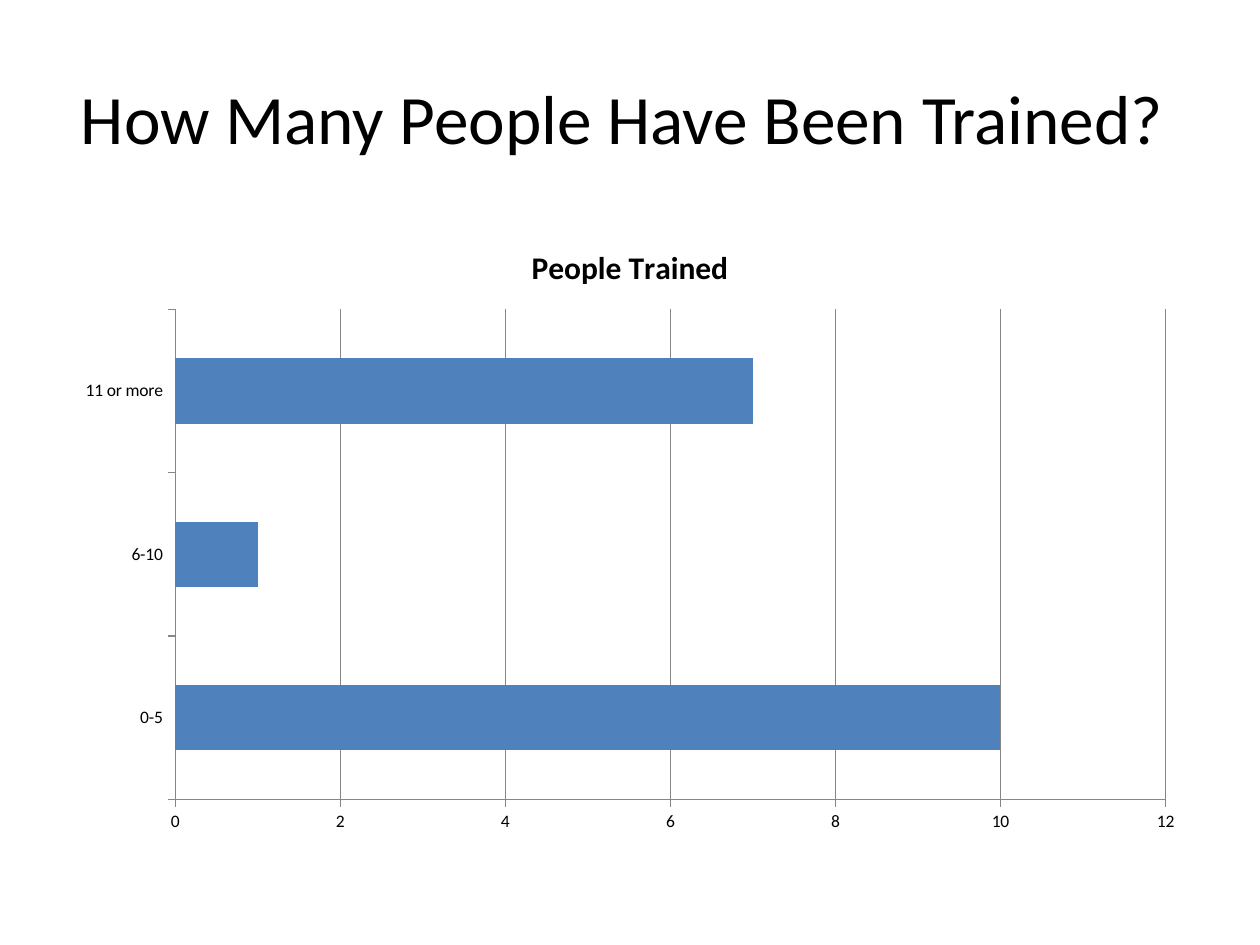
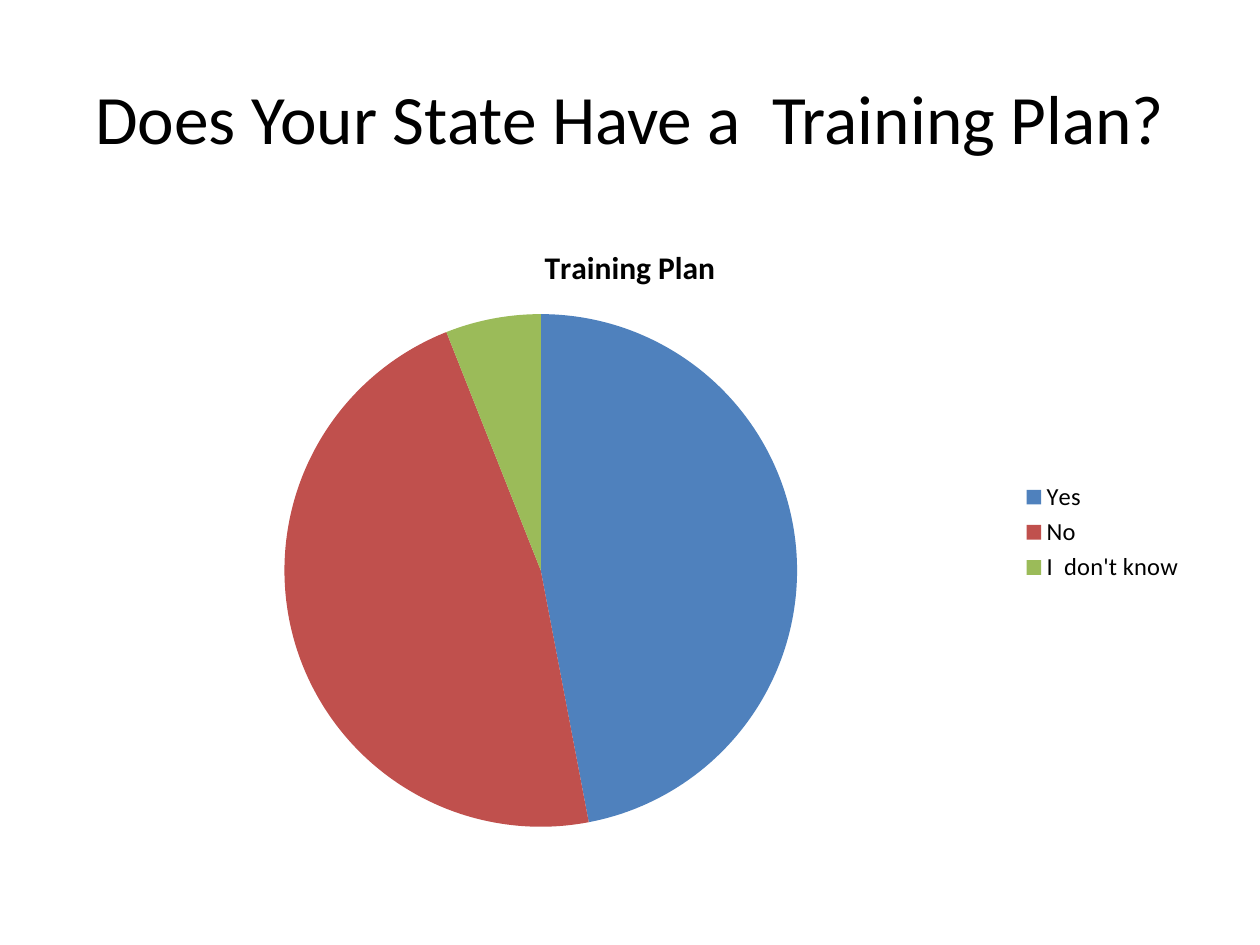
"""Build two survey slides, each a title above one chart."""

from dataclasses import dataclass

from pptx import Presentation
from pptx.chart.chart import Chart
from pptx.chart.data import CategoryChartData
from pptx.dml.color import RGBColor as Rgb
from pptx.enum.chart import XL_CHART_TYPE as ChartType
from pptx.enum.chart import XL_LEGEND_POSITION as LegendPosition
from pptx.enum.chart import XL_TICK_MARK as TickMark
from pptx.enum.text import MSO_ANCHOR as Anchor
from pptx.enum.text import MSO_AUTO_SIZE as AutoSize
from pptx.enum.text import PP_ALIGN as Align
from pptx.presentation import Presentation as Deck
from pptx.slide import Slide
from pptx.text.text import Font
from pptx.util import Emu, Pt

EMU_PER_PX = 9144
TITLE_ONLY = 5


@dataclass(frozen=True)
class Theme:
    font: str = "Calibri"
    text: Rgb = Rgb(0x00, 0x00, 0x00)
    background: Rgb = Rgb(0xFF, 0xFF, 0xFF)
    axis: Rgb = Rgb(0x86, 0x86, 0x86)
    accents: tuple[Rgb, ...] = (
        Rgb(0x4F, 0x81, 0xBD),
        Rgb(0xC0, 0x50, 0x4D),
        Rgb(0x9B, 0xBB, 0x59),
    )
    title_size: float = 39.6
    chart_title_size: float = 18
    legend_size: float = 14
    label_size: float = 10


@dataclass(frozen=True)
class Box:
    left: int
    top: int
    width: int
    height: int

    def emu(self) -> tuple[Emu, ...]:
        return tuple(map(px, (self.left, self.top, self.width, self.height)))


@dataclass(frozen=True)
class Question:
    title: str
    kind: ChartType
    chart_title: str
    series: str
    answers: dict[str, int]


THEME = Theme()
TITLE_BOX = Box(50, 30, 900, 125)
CHART_BOX = Box(50, 175, 900, 495)
QUESTIONS = (
    Question(
        "How Many People Have Been Trained? ",
        ChartType.BAR_CLUSTERED,
        "People Trained",
        "Series 1",
        {"0-5": 10, "6-10": 1, "11 or more": 7},
    ),
    Question(
        "Does Your State Have a  Training Plan?",
        ChartType.PIE,
        "Training Plan",
        "Training Plan",
        {"Yes": 47, "No": 47, "I  don't know": 6},
    ),
)


def px(length: int) -> Emu:
    return Emu(length * EMU_PER_PX)


def style_font(font: Font, size: float, bold: bool = False) -> None:
    font.name = THEME.font
    font.size = Pt(size)
    font.bold = bold
    font.color.rgb = THEME.text


def add_title(slide: Slide, wording: str) -> None:
    heading = slide.shapes.title
    heading.left, heading.top, heading.width, heading.height = TITLE_BOX.emu()
    frame = heading.text_frame
    frame.text = wording
    frame.word_wrap = True
    frame.auto_size = AutoSize.NONE
    frame.vertical_anchor = Anchor.MIDDLE
    paragraph = frame.paragraphs[0]
    paragraph.alignment = Align.CENTER
    style_font(paragraph.font, THEME.title_size)


def add_question_chart(slide: Slide, question: Question) -> Chart:
    answers = CategoryChartData()
    answers.categories = list(question.answers)
    answers.add_series(question.series, list(question.answers.values()))
    frame = slide.shapes.add_chart(question.kind, *CHART_BOX.emu(), answers)
    chart = frame.chart
    style_font(chart.font, THEME.label_size)
    chart.has_title = True
    caption = chart.chart_title
    caption.include_in_layout = False
    caption.text_frame.text = question.chart_title
    style_font(caption.text_frame.paragraphs[0].font, THEME.chart_title_size, bold=True)
    return chart


def style_bars(chart: Chart) -> None:
    chart.has_legend = False
    bars = chart.plots[0]
    bars.gap_width = 150
    bars.vary_by_categories = False
    fill = bars.series[0].format.fill
    fill.solid()
    fill.fore_color.rgb = THEME.accents[0]
    counts, ranges = chart.value_axis, chart.category_axis
    counts.has_major_gridlines = True
    ranges.has_major_gridlines = False
    for axis in (counts, ranges):
        axis.major_tick_mark = TickMark.OUTSIDE
        axis.minor_tick_mark = TickMark.NONE
    for part in (counts, ranges, counts.major_gridlines):
        part.format.line.color.rgb = THEME.axis
        part.format.line.width = Pt(0.75)


def style_pie(chart: Chart) -> None:
    chart.has_legend = True
    chart.legend.position = LegendPosition.RIGHT
    chart.legend.include_in_layout = False
    style_font(chart.legend.font, THEME.legend_size)
    pie = chart.plots[0]
    pie.vary_by_categories = True
    for index, accent in enumerate(THEME.accents):
        fill = pie.series[0].points[index].format.fill
        fill.solid()
        fill.fore_color.rgb = accent


def add_question_slide(deck: Deck, question: Question) -> None:
    slide = deck.slides.add_slide(deck.slide_layouts[TITLE_ONLY])
    slide.background.fill.solid()
    slide.background.fill.fore_color.rgb = THEME.background
    add_title(slide, question.title)
    chart = add_question_chart(slide, question)
    if question.kind == ChartType.PIE:
        style_pie(chart)
    else:
        style_bars(chart)


def main() -> None:
    deck = Presentation()
    deck.slide_width, deck.slide_height = px(1000), px(750)
    for question in QUESTIONS:
        add_question_slide(deck, question)
    deck.save("out.pptx")


if __name__ == "__main__":
    main()
